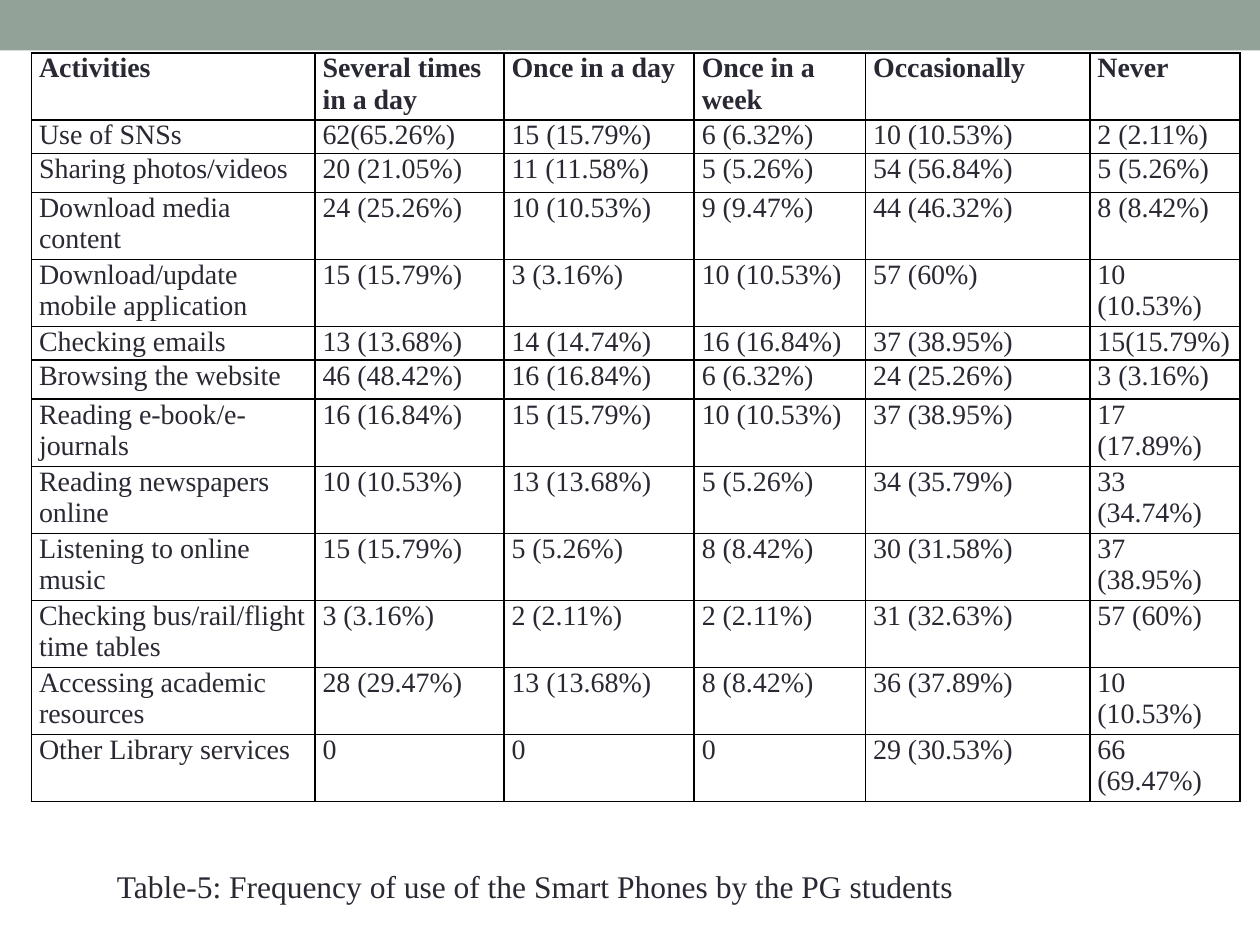
from dataclasses import dataclass

import lxml.etree
import pptx
import pptx.dml.color
import pptx.enum.shapes
import pptx.oxml.ns
import pptx.util

SLIDE_WIDTH = pptx.util.Inches(10)
SLIDE_HEIGHT = pptx.util.Inches(7.5)
SAGE = pptx.dml.color.RGBColor(0x93, 0xA2, 0x99)
INK = pptx.dml.color.RGBColor(0x29, 0x29, 0x34)
BLACK = pptx.dml.color.RGBColor(0x00, 0x00, 0x00)
FONT = "Times New Roman"
CELL_MARGIN = pptx.util.Inches(0.06)
BORDER_WIDTH = pptx.util.Pt(1)

# Shares are percentages of the slide's width or height.
COLUMN_SHARES = (22.5, 15, 15.1, 13.6, 17.8, 11.9)
ONE_LINE, LOOSE_LINE, TWO_LINES = 3.55, 4.13, 7.1


@dataclass(frozen=True)
class Box:
    """A rectangle in percentages of the slide."""
    left: float
    top: float
    width: float
    height: float

    def lengths(self) -> tuple:
        return (across(self.left), down(self.top),
                across(self.width), down(self.height))


@dataclass(frozen=True)
class Row:
    cells: tuple
    height: float = TWO_LINES
    bold: bool = False


ROWS = (
    Row(("Activities", "Several times in a day", "Once in a day",
         "Once in a week", "Occasionally", "Never"), bold=True),
    Row(("Use of SNSs", "62(65.26%)", "15 (15.79%)", "6 (6.32%)",
         "10 (10.53%)", "2 (2.11%)"), ONE_LINE),
    Row(("Sharing photos/videos", "20 (21.05%)", "11 (11.58%)", "5 (5.26%)",
         "54 (56.84%)", "5 (5.26%)"), LOOSE_LINE),
    Row(("Download media content", "24 (25.26%)", "10 (10.53%)", "9 (9.47%)",
         "44 (46.32%)", "8 (8.42%)")),
    Row(("Download/update mobile application", "15 (15.79%)", "3 (3.16%)",
         "10 (10.53%)", "57 (60%)", "10 (10.53%)")),
    Row(("Checking emails", "13 (13.68%)", "14 (14.74%)", "16 (16.84%)",
         "37 (38.95%)", "15(15.79%)"), ONE_LINE),
    Row(("Browsing the website", "46 (48.42%)", "16 (16.84%)", "6 (6.32%)",
         "24 (25.26%)", "3 (3.16%)"), LOOSE_LINE),
    Row(("Reading e-book/e-journals", "16 (16.84%)", "15 (15.79%)",
         "10 (10.53%)", "37 (38.95%)", "17 (17.89%)")),
    Row(("Reading newspapers online", "10 (10.53%)", "13 (13.68%)",
         "5 (5.26%)", "34 (35.79%)", "33 (34.74%)")),
    Row(("Listening to online music", "15 (15.79%)", "5 (5.26%)",
         "8 (8.42%)", "30 (31.58%)", "37 (38.95%)")),
    Row(("Checking bus/rail/flight time tables", "3 (3.16%)", "2 (2.11%)",
         "2 (2.11%)", "31 (32.63%)", "57 (60%)")),
    Row(("Accessing academic resources", "28 (29.47%)", "13 (13.68%)",
         "8 (8.42%)", "36 (37.89%)", "10 (10.53%)")),
    Row(("Other Library services", "0", "0", "0", "29 (30.53%)",
         "66 (69.47%)")),
)

BAND = Box(0, 0, 100, 5.33)
TABLE = Box(2.5, 5.6, sum(COLUMN_SHARES), sum(row.height for row in ROWS))
CAPTION = Box(8.3, 91.07, 85, 5.33)


def across(share: float) -> int:
    return round(SLIDE_WIDTH * share / 100)


def down(share: float) -> int:
    return round(SLIDE_HEIGHT * share / 100)


def write_text(text_frame, text: str, size: float, bold: bool = False) -> None:
    text_frame.text = text
    font = text_frame.paragraphs[0].runs[0].font
    font.name = FONT
    font.size = pptx.util.Pt(size)
    font.bold = bold
    font.color.rgb = INK


def add_borders(cell) -> None:
    """Put the four border lines ahead of the cell's fill, as the schema asks."""
    qn = pptx.oxml.ns.qn
    properties = cell._tc.get_or_add_tcPr()
    for position, side in enumerate(("lnL", "lnR", "lnT", "lnB")):
        line = lxml.etree.Element(qn(f"a:{side}"), w=str(BORDER_WIDTH))
        fill = lxml.etree.SubElement(line, qn("a:solidFill"))
        lxml.etree.SubElement(fill, qn("a:srgbClr"), val=str(BLACK))
        properties.insert(position, line)


def add_band(slide) -> None:
    band = slide.shapes.add_shape(
        pptx.enum.shapes.MSO_SHAPE.RECTANGLE, *BAND.lengths())
    band.shadow.inherit = False
    band.fill.solid()
    band.fill.fore_color.rgb = SAGE
    band.line.fill.background()


def add_activity_table(slide) -> None:
    table = slide.shapes.add_table(
        len(ROWS), len(COLUMN_SHARES), *TABLE.lengths()).table
    table.first_row = False
    table.horz_banding = False
    for column, share in zip(table.columns, COLUMN_SHARES):
        column.width = across(share)
    for table_row, row in zip(table.rows, ROWS):
        table_row.height = down(row.height)
        for cell, text in zip(table_row.cells, row.cells):
            cell.margin_left = cell.margin_right = CELL_MARGIN
            cell.margin_top = cell.margin_bottom = 0
            cell.fill.background()
            write_text(cell.text_frame, text, 16, row.bold)
            add_borders(cell)


def add_caption(slide) -> None:
    text_frame = slide.shapes.add_textbox(*CAPTION.lengths()).text_frame
    text_frame.word_wrap = True
    write_text(text_frame,
               "Table-5: Frequency of use of the Smart Phones by the PG students",
               18)


def main() -> None:
    presentation = pptx.Presentation()
    presentation.slide_width = SLIDE_WIDTH
    presentation.slide_height = SLIDE_HEIGHT
    slide = presentation.slides.add_slide(presentation.slide_layouts[6])
    add_band(slide)
    add_activity_table(slide)
    add_caption(slide)
    presentation.save("out.pptx")


if __name__ == "__main__":
    main()
